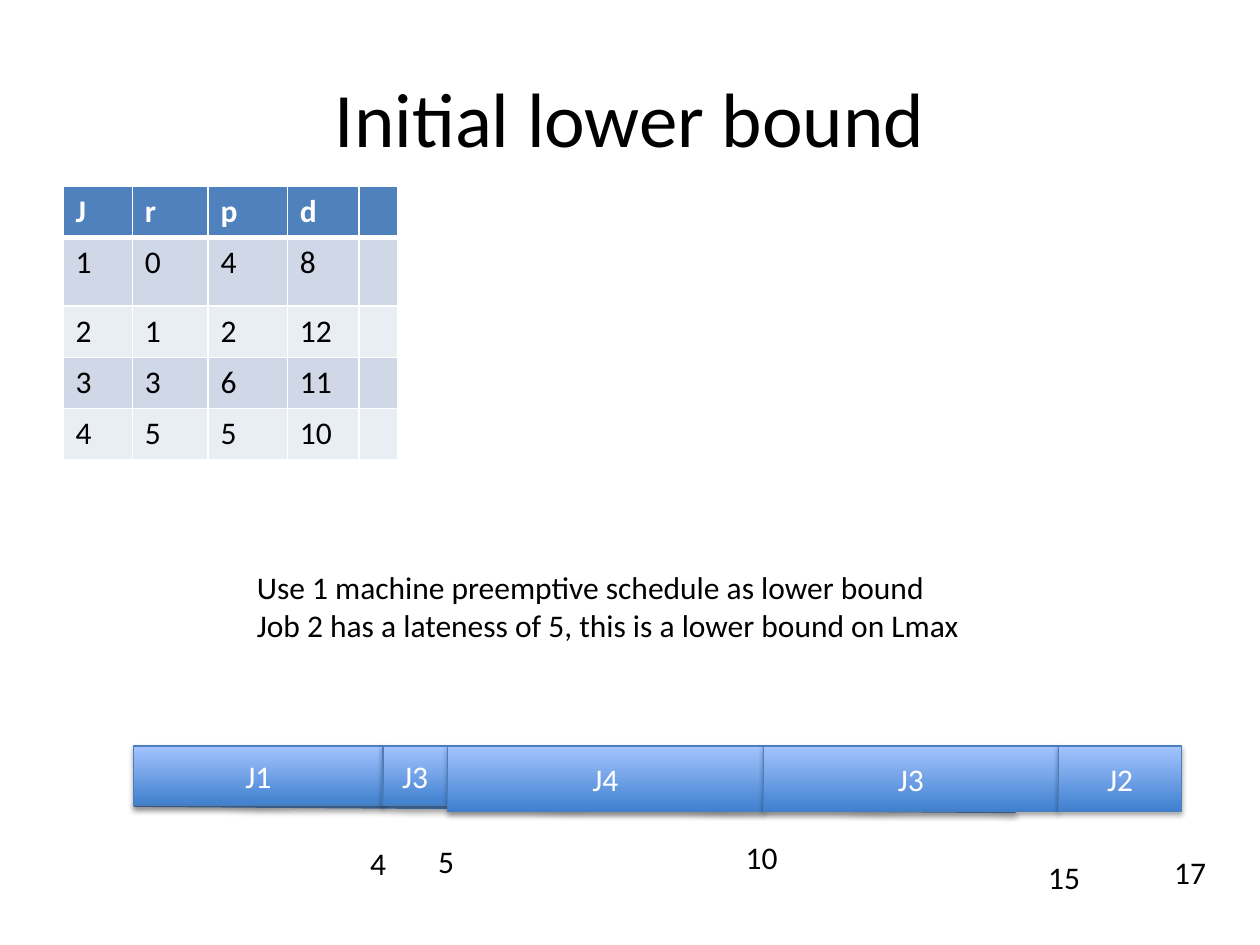
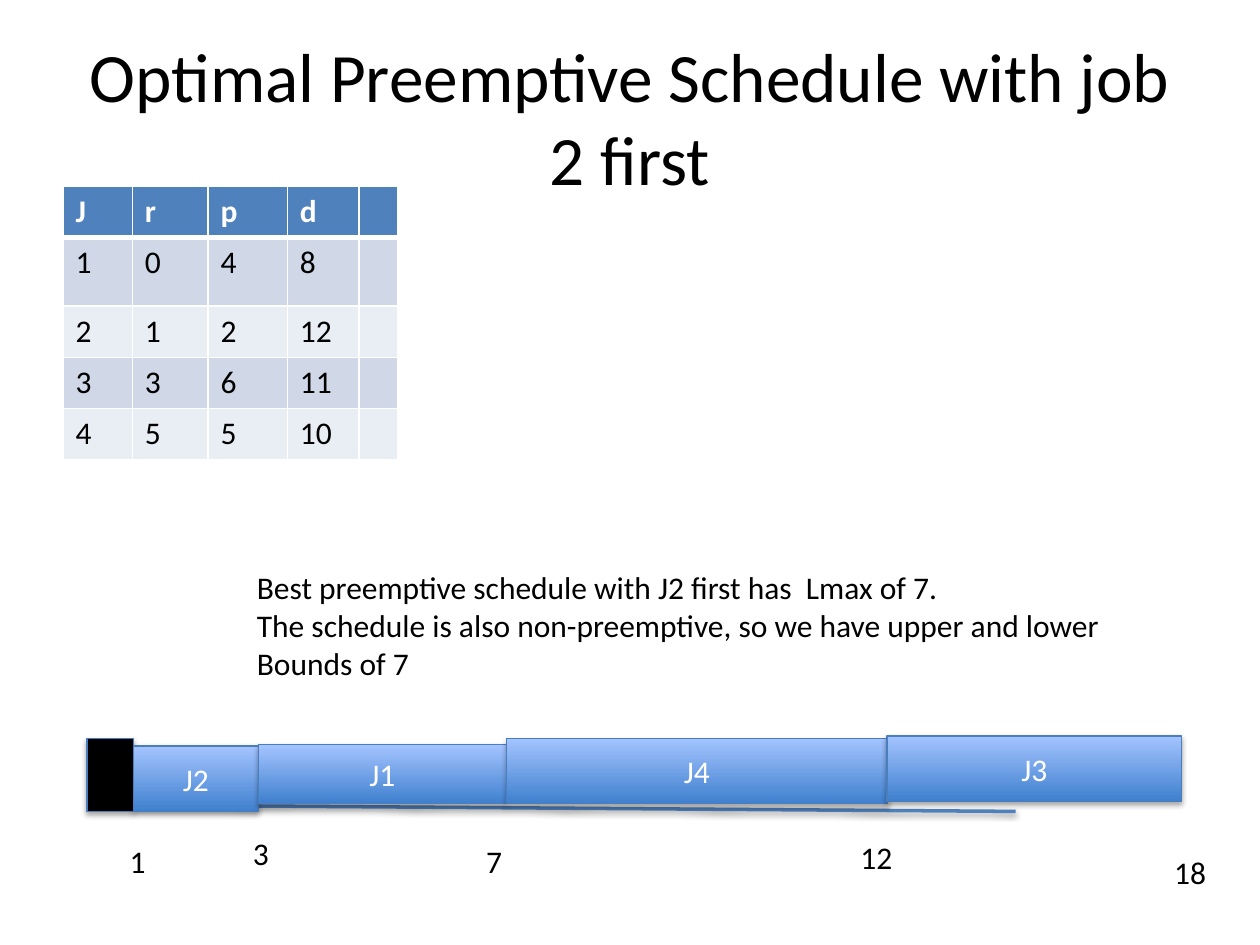
from dataclasses import dataclass
from itertools import pairwise

from lxml import etree
from pptx import Presentation
from pptx import util as u
from pptx.dml import color
from pptx.enum import shapes, text
from pptx.oxml import ns


@dataclass(frozen=True)
class Theme:
    font: str = "Calibri"
    title_size: float = 44
    long_title_size: float = 39.6
    body_size: float = 18
    ink: str = "000000"
    paper: str = "FFFFFF"
    header: str = "4F81BD"
    bands: tuple = ("D0D8E8", "E9EDF4")
    bar_bottom: str = "3F80CE"
    bar_top: str = "A4C4FF"
    bar_line: str = "4B7EBC"
    axis: str = "4F81BD"


JOB_TABLE = [
    ("J", "r", "p", "d", ""),
    ("1", "0", "4", "8", ""),
    ("2", "1", "2", "12", ""),
    ("3", "3", "6", "11", ""),
    ("4", "5", "5", "10", ""),
]
TABLE_COLUMNS = (5.5, 6, 6.3, 5.7, 3.1)
TABLE_ROWS = (4.05, 5.45, 4.05, 4.05, 4.05)


def rgb(value):
    return color.RGBColor.from_string(value)


class ScheduleDeck:
    COLUMNS = 100
    ROWS = 75

    def __init__(self, theme):
        self.theme = theme
        self.presentation = Presentation()
        self.presentation.slide_width = u.Inches(10)
        self.presentation.slide_height = u.Inches(7.5)
        self.slide = None

    def x(self, columns):
        return round(self.presentation.slide_width * columns / self.COLUMNS)

    def y(self, rows):
        return round(self.presentation.slide_height * rows / self.ROWS)

    def box(self, left, top, width, height):
        return self.x(left), self.y(top), self.x(width), self.y(height)

    def add_words(self, paragraph, words, size, ink, bold=False):
        run = paragraph.add_run()
        run.text = words
        run.font.name = self.theme.font
        run.font.size = u.Pt(size)
        run.font.bold = bold
        run.font.color.rgb = rgb(ink)

    def shadow(self, shape, distance, opacity):
        properties = shape._element.spPr
        effects = properties.find(ns.qn("a:effectLst"))
        if effects is None:
            effects = etree.SubElement(properties, ns.qn("a:effectLst"))
        outer = etree.SubElement(
            effects, ns.qn("a:outerShdw"), blurRad="40000",
            dist=str(distance), dir="5400000", rotWithShape="0",
        )
        black = etree.SubElement(outer, ns.qn("a:srgbClr"), val=self.theme.ink)
        etree.SubElement(black, ns.qn("a:alpha"), val=str(opacity * 1000))

    def start_slide(self, title, size):
        layout = self.presentation.slide_layouts[5]
        self.slide = self.presentation.slides.add_slide(layout)
        shape = self.slide.shapes.title
        shape.left, shape.top, shape.width, shape.height = self.box(5, 3, 90, 12.5)
        frame = shape.text_frame
        frame.auto_size = text.MSO_AUTO_SIZE.NONE
        frame.vertical_anchor = text.MSO_ANCHOR.MIDDLE
        paragraph = frame.paragraphs[0]
        paragraph.alignment = text.PP_ALIGN.CENTER
        self.add_words(paragraph, title, size, self.theme.ink)

    def cell_borders(self, cell, widths):
        properties = cell._tc.get_or_add_tcPr()
        for side, width in zip("LRTB", widths):
            line = etree.SubElement(
                properties, ns.qn(f"a:ln{side}"), w=str(int(u.Pt(width)))
            )
            fill = etree.SubElement(line, ns.qn("a:solidFill"))
            etree.SubElement(fill, ns.qn("a:srgbClr"), val=self.theme.paper)

    def job_table(self):
        theme = self.theme
        frame = self.slide.shapes.add_table(
            len(JOB_TABLE), len(TABLE_COLUMNS),
            *self.box(5, 14.8, sum(TABLE_COLUMNS), sum(TABLE_ROWS)),
        )
        table = frame.table
        for column, width in zip(table.columns, TABLE_COLUMNS):
            column.width = self.x(width)
        for row, height in zip(table.rows, TABLE_ROWS):
            row.height = self.y(height)
        for row, values in enumerate(JOB_TABLE):
            is_header = row == 0
            fill = theme.header if is_header else theme.bands[(row - 1) % 2]
            ink = theme.paper if is_header else theme.ink
            widths = (1, 1, 3 if row == 1 else 1, 3 if is_header else 1)
            for column, value in enumerate(values):
                cell = table.cell(row, column)
                self.cell_borders(cell, widths)
                cell.fill.solid()
                cell.fill.fore_color.rgb = rgb(fill)
                if value:
                    paragraph = cell.text_frame.paragraphs[0]
                    self.add_words(paragraph, value, theme.body_size, ink, is_header)

    def label(self, lines, left, top, width, height):
        shape = self.slide.shapes.add_textbox(*self.box(left, top, width, height))
        frame = shape.text_frame
        frame.word_wrap = False
        frame.auto_size = text.MSO_AUTO_SIZE.SHAPE_TO_FIT_TEXT
        for index, line in enumerate(lines):
            paragraph = frame.add_paragraph() if index else frame.paragraphs[0]
            self.add_words(paragraph, line, self.theme.body_size, self.theme.ink)

    def time_axis(self):
        axis = self.slide.shapes.add_connector(
            shapes.MSO_CONNECTOR.STRAIGHT,
            self.x(10.6), self.y(63.9), self.x(80.6), self.y(64.4),
        )
        axis.line.color.rgb = rgb(self.theme.axis)
        axis.line.width = u.Pt(2)
        self.shadow(axis, 20000, 38)

    def bar(self, job, left, top, width, height):
        theme = self.theme
        shape = self.slide.shapes.add_shape(
            shapes.MSO_SHAPE.RECTANGLE, *self.box(left, top, width, height)
        )
        shape.line.color.rgb = rgb(theme.bar_line)
        shape.line.width = u.Pt(0.75)
        shape.shadow.inherit = False
        self.shadow(shape, 23000, 35)
        if not job:
            shape.fill.solid()
            shape.fill.fore_color.rgb = rgb(theme.ink)
            return
        shape.fill.gradient()
        shape.fill.gradient_angle = 90
        for stop, shade in zip(
            shape.fill.gradient_stops, (theme.bar_bottom, theme.bar_top)
        ):
            stop.color.rgb = rgb(shade)
        frame = shape.text_frame
        frame.vertical_anchor = text.MSO_ANCHOR.MIDDLE
        paragraph = frame.paragraphs[0]
        paragraph.alignment = text.PP_ALIGN.CENTER
        self.add_words(paragraph, job, theme.body_size, theme.paper)

    def schedule(self, edges, jobs, times):
        self.time_axis()
        for (left, right), (job, top, height) in zip(pairwise(edges), jobs):
            self.bar(job, left, top, right - left, height)
        for time, left, top in times:
            self.label([time], left, top, 2 + 1.3 * len(time), 4)


def main():
    theme = Theme()
    deck = ScheduleDeck(theme)

    deck.start_slide("Initial lower bound", theme.title_size)
    deck.job_table()
    deck.label(
        [
            "Use 1 machine preemptive schedule as lower bound",
            "Job 2 has a lateness of 5, this is a lower bound on Lmax",
        ],
        19.4, 44.6, 58.4, 7.1,
    )
    deck.schedule(
        edges=(10.6, 30.4, 35.5, 60.6, 84, 93.8),
        jobs=[
            ("J1", 59.2, 4.7), ("J3", 59.2, 4.7), ("J4", 59.2, 5.2),
            ("J3", 59.2, 5.2), ("J2", 59.2, 5.2),
        ],
        times=[
            ("4", 28.4, 66.5), ("5", 33.8, 66.3), ("10", 58.2, 66),
            ("15", 82.2, 67.6), ("17", 92.2, 67.2),
        ],
    )

    deck.start_slide(
        "Optimal Preemptive Schedule with job 2 first", theme.long_title_size
    )
    deck.job_table()
    deck.label(
        [
            "Best preemptive schedule with J2 first has  Lmax of 7.",
            "The schedule is also non-preemptive, so we have upper and lower",
            "Bounds of 7",
        ],
        19.4, 44.6, 69.8, 13.1,
    )
    deck.schedule(
        edges=(6.9, 10.6, 20.5, 40.2, 70.4, 93.8),
        jobs=[
            ("", 58.6, 5.8), ("J2", 59.2, 5.2), ("J1", 59.1, 4.7),
            ("J4", 58.6, 5.2), ("J3", 58.4, 5.2),
        ],
        times=[
            ("1", 9.3, 66.3), ("3", 19.1, 65.7), ("7", 37.6, 66.3),
            ("12", 67.3, 66), ("18", 92.2, 67.2),
        ],
    )

    deck.presentation.save("out.pptx")


if __name__ == "__main__":
    main()
